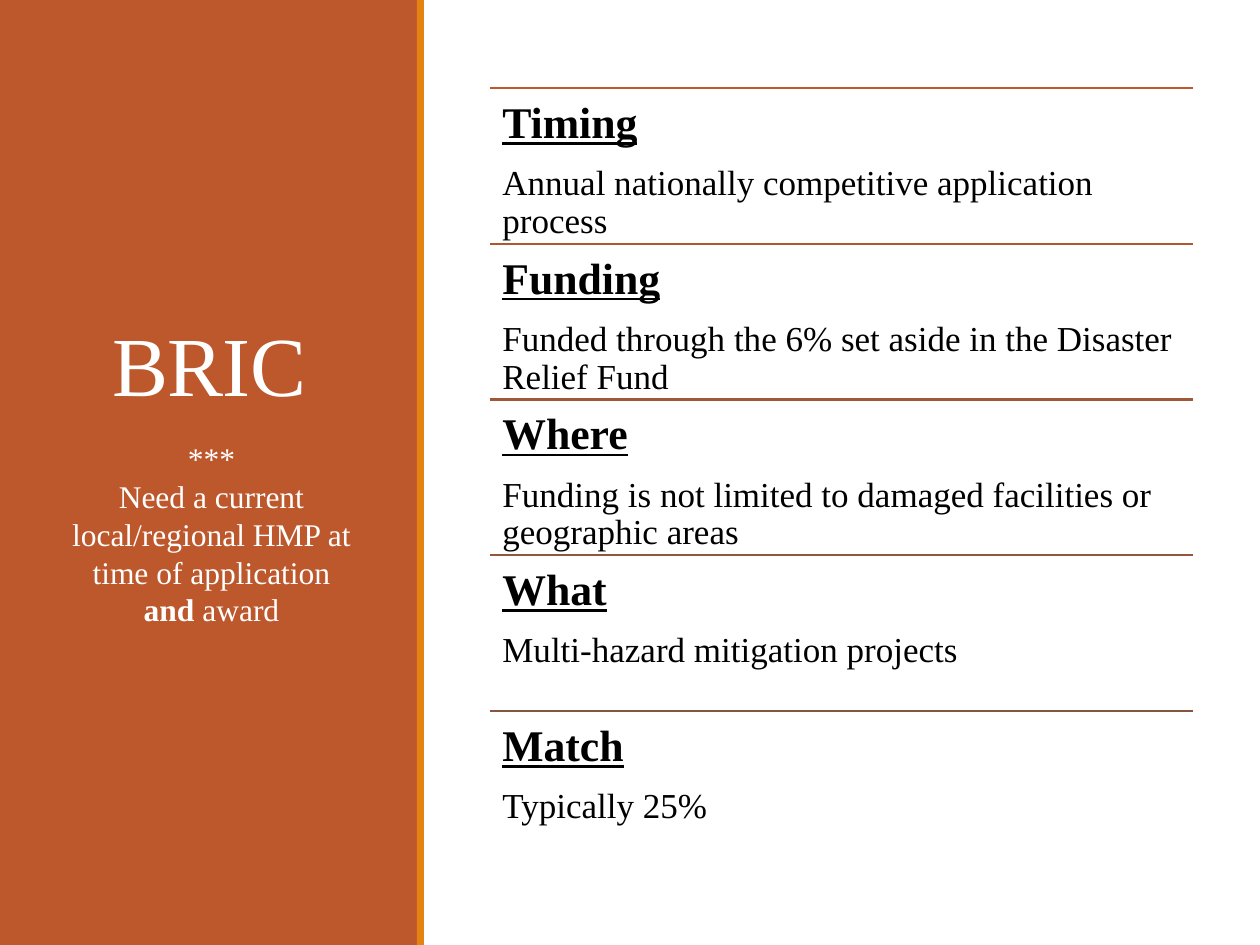
import pptx
import pptx.dml.color
import pptx.enum.shapes
import pptx.enum.text
import pptx.util
import lxml.etree
import pptx.oxml.ns

RGBColor = pptx.dml.color.RGBColor
Align = pptx.enum.text.PP_ALIGN
Anchor = pptx.enum.text.MSO_ANCHOR

RUST = RGBColor(0xBD, 0x58, 0x2C)
ORANGE = RGBColor(0xE4, 0x83, 0x12)
WHITE = RGBColor(0xFF, 0xFF, 0xFF)
BLACK = RGBColor(0x00, 0x00, 0x00)
RULE_COLORS = (
    RUST,
    RGBColor(0xAE, 0x58, 0x32),
    RGBColor(0xA0, 0x58, 0x37),
    RGBColor(0x93, 0x57, 0x3C),
    RGBColor(0x86, 0x56, 0x40),
)
FONT = "Times New Roman"
TOPICS = (
    ("Timing", "Annual nationally competitive application process"),
    ("Funding", "Funded through the 6% set aside in the Disaster Relief Fund"),
    ("Where", "Funding is not limited to damaged facilities or geographic areas"),
    ("What", "Multi-hazard mitigation projects"),
    ("Match", "Typically 25%"),
)


def px(count):
    """Turn pixels into EMU at 126 pixels to the inch."""
    return pptx.util.Emu(round(count * 914400 / 126))


def add_span(para, text, size, color, bold=False, underline=False):
    """Add one formatted run to a paragraph and return it."""
    span = para.add_run()
    span.text = text
    span.font.name = FONT
    span.font.size = pptx.util.Pt(size)
    span.font.color.rgb = color
    span.font.bold = bold
    span.font.underline = underline
    return span


def add_bar(page, left, top, width, height, color):
    """Add a plain filled rectangle."""
    bar = page.shapes.add_shape(
        pptx.enum.shapes.MSO_SHAPE.RECTANGLE, px(left), px(top), px(width), px(height)
    )
    bar.shadow.inherit = False
    bar.fill.solid()
    bar.fill.fore_color.rgb = color
    bar.line.fill.background()


def place_title(page, left, top, width, height):
    """Place the slide title above the shapes drawn so far."""
    title = page.shapes.title
    page.shapes._spTree.append(title._element)
    title.left, title.top, title.width, title.height = map(px, (left, top, width, height))
    frame = title.text_frame
    frame.word_wrap = True
    frame.auto_size = pptx.enum.text.MSO_AUTO_SIZE.NONE
    frame.vertical_anchor = Anchor.MIDDLE
    para = frame.paragraphs[0]
    para.alignment = Align.CENTER
    para.line_spacing = 0.85
    span = add_span(para, "BRIC", 48, WHITE)
    span.font._element.set("spc", "-50")


def add_requirement(page, left, top, width, height):
    """Add the plan requirement under the title."""
    box = page.shapes.add_textbox(px(left), px(top), px(width), px(height))
    frame = box.text_frame
    frame.word_wrap = True
    stars, need = frame.paragraphs[0], frame.add_paragraph()
    stars.alignment = need.alignment = Align.CENTER
    add_span(stars, "***", 18, WHITE)
    add_span(need, "Need a current local/regional HMP at time of application ", 18, WHITE)
    add_span(need, "and", 18, WHITE, bold=True)
    add_span(need, " award", 18, WHITE)


def add_side_panel(page, left, top, width, height):
    """Build the coloured panel with the title and the requirement."""
    add_bar(page, left, top, width, height, RUST)
    place_title(page, left + 50, top + 301, 319, 139)
    add_bar(page, left + width - 1, top, 7, height, ORANGE)
    add_requirement(page, left + 52, top + 433, 319, 204)


def add_topic(group, left, top, width, height, heading, detail, color):
    """Add one topic: a rule, a heading and a line of detail."""
    rule = group.shapes.add_connector(
        pptx.enum.shapes.MSO_CONNECTOR.STRAIGHT, px(left), px(top), px(left + width), px(top)
    )
    rule.line.color.rgb = color
    rule.line.width = pptx.util.Pt(1.25)
    lxml.etree.SubElement(rule._element.spPr, pptx.oxml.ns.qn("a:effectLst"))
    box = group.shapes.add_textbox(px(left), px(top), px(width), px(height))
    frame = box.text_frame
    frame.word_wrap = True
    frame.margin_top = frame.margin_bottom = pptx.util.Inches(0.1)
    head, body = frame.paragraphs[0], frame.add_paragraph()
    head.line_spacing = body.line_spacing = 0.9
    head.space_after = pptx.util.Pt(10)
    body.space_after = pptx.util.Pt(8)
    add_span(head, heading, 25, BLACK, bold=True, underline=True)
    add_span(body, detail, 20, BLACK)


def add_topic_list(page, left, top, width, height):
    """Stack the topics in rows of equal height."""
    group = page.shapes.add_group_shape()
    row = height / len(TOPICS)
    for index, ((heading, detail), color) in enumerate(zip(TOPICS, RULE_COLORS)):
        add_topic(group, left, top + index * row, width, row, heading, detail, color)


def main():
    """Build the deck and save it."""
    deck = pptx.Presentation()
    deck.slide_width, deck.slide_height = px(1260), px(945)
    page = deck.slides.add_slide(deck.slide_layouts[5])
    add_side_panel(page, 0, 0, 418, 945)
    add_topic_list(page, 490, 88, 703, 779)
    deck.save("out.pptx")


if __name__ == "__main__":
    main()
